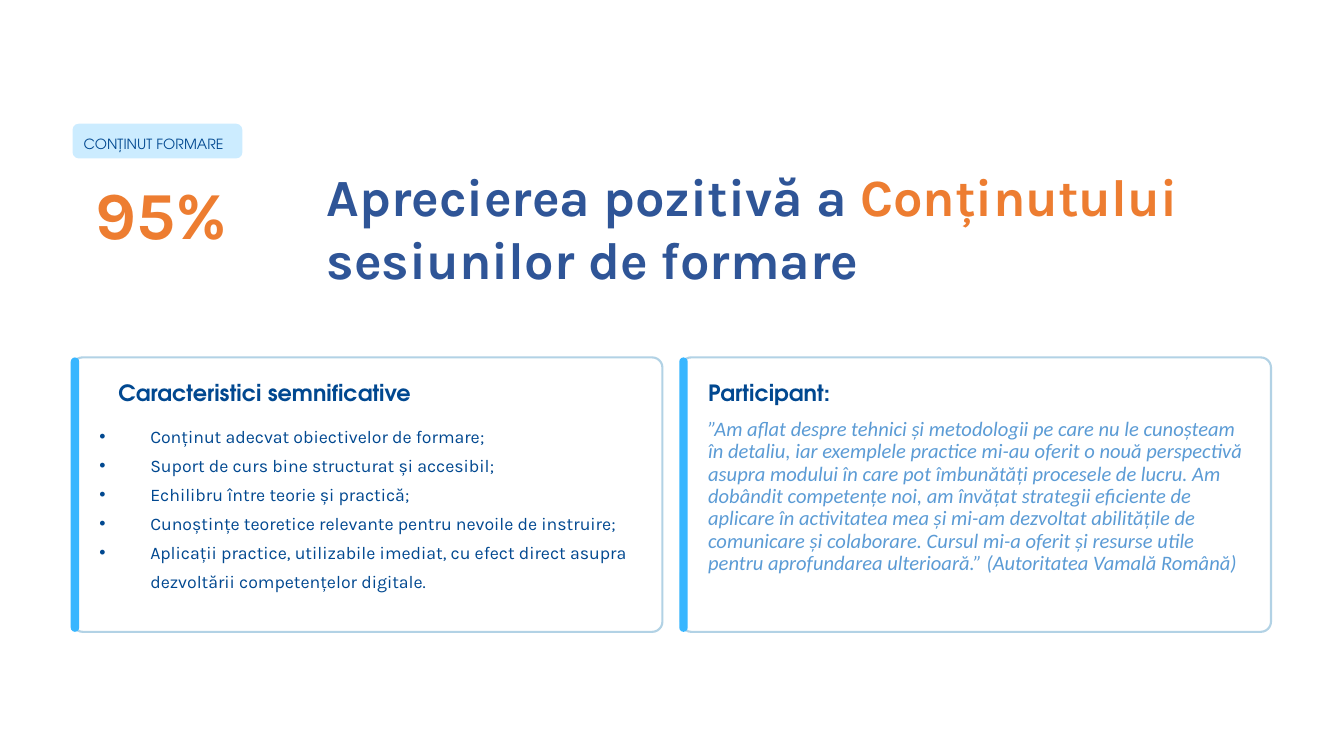
"""Build the slide on how participants rated the content of the training sessions."""
from dataclasses import dataclass

from lxml.etree import SubElement
from pptx import Presentation
from pptx.dml.color import RGBColor
from pptx.enum.shapes import MSO_SHAPE
from pptx.enum.text import MSO_ANCHOR, MSO_AUTO_SIZE, PP_ALIGN
from pptx.oxml.ns import qn
from pptx.shapes.autoshape import Shape
from pptx.slide import Slide
from pptx.util import Pt

NAVY = RGBColor(0x01, 0x48, 0x90)
TITLE_BLUE = RGBColor(0x2F, 0x55, 0x97)
QUOTE_BLUE = RGBColor(0x5B, 0x9B, 0xD5)
ORANGE = RGBColor(0xED, 0x7D, 0x31)
ACCENT = RGBColor(0x38, 0xB6, 0xFF)
BORDER = RGBColor(0xB2, 0xD2, 0xE5)
PALE_BLUE = RGBColor(0xCC, 0xEC, 0xFF)
WHITE = RGBColor(0xFF, 0xFF, 0xFF)

PANEL_TOP, PANEL_WIDTH, PANEL_HEIGHT = 191.5, 316, 147
HEADING_TOP, CONTENT_TOP, CONTENT_WIDTH = 202.3, 224, 291
LIST_INDENT = 27.2

FEATURES = [
    "Conținut adecvat obiectivelor de formare;",
    "Suport de curs bine structurat și accesibil;",
    "Echilibru între teorie și practică;",
    "Cunoștințe teoretice relevante pentru nevoile de instruire;",
    "Aplicații practice, utilizabile imediat, cu efect direct asupra "
    "dezvoltării competențelor digitale.",
]
QUOTE = (
    "”Am aflat despre tehnici și metodologii pe care nu le cunoșteam în detaliu, "
    "iar exemplele practice mi-au oferit o nouă perspectivă asupra modului în care "
    "pot îmbunătăți procesele de lucru. Am dobândit competențe noi, am învățat "
    "strategii eficiente de aplicare în activitatea mea și mi-am dezvoltat "
    "abilitățile de comunicare și colaborare. Cursul mi-a oferit și resurse utile "
    "pentru aprofundarea ulterioară.” (Autoritatea Vamală Română)"
)


@dataclass(frozen=True)
class Frame:
    left: float
    top: float
    width: float
    height: float


@dataclass(frozen=True)
class Style:
    font: str
    size: float
    color: RGBColor
    bold: bool = False
    italic: bool = False
    spacing: float | None = None
    align: PP_ALIGN = PP_ALIGN.LEFT


@dataclass(frozen=True)
class Span:
    text: str
    color: RGBColor | None = None


@dataclass(frozen=True)
class Panel:
    left: float
    heading: str
    heading_left: float


TAG_STYLE = Style("TeX Gyre Adventor", 7.5, NAVY, spacing=12.5)
HEADING_STYLE = Style("TeX Gyre Adventor", 12, NAVY, bold=True, spacing=15)
LIST_STYLE = Style("Karla", 9.5, NAVY, spacing=15.5)
QUOTE_STYLE = Style("Calibri", 11, QUOTE_BLUE, italic=True, spacing=12)
SCORE_STYLE = Style("Karla", 36, ORANGE, bold=True, spacing=26, align=PP_ALIGN.CENTER)
TITLE_STYLE = Style("Karla", 28, TITLE_BLUE, bold=True)

PANELS = [
    Panel(38.9, "Caracteristici semnificative", 63.4),
    Panel(364.9, "Participant:", 379.4),
]


def add_bar(slide: Slide, frame: Frame, rounding: float, fill: RGBColor,
            line: RGBColor | None = None) -> None:
    """Draw a rounded rectangle."""
    bar = slide.shapes.add_shape(MSO_SHAPE.ROUNDED_RECTANGLE, Pt(frame.left),
                                 Pt(frame.top), Pt(frame.width), Pt(frame.height))
    bar.shadow.inherit = False
    bar.adjustments[0] = rounding
    bar.fill.solid()
    bar.fill.fore_color.rgb = fill
    if line is None:
        bar.line.fill.background()
    else:
        bar.line.color.rgb = line
        bar.line.width = Pt(1.13)


def write(box: Shape, paragraphs: list[list[Span]], style: Style,
          inset: tuple[float, float] = (0, 0), bullets: bool = False) -> None:
    """Fill a text shape with styled paragraphs."""
    frame = box.text_frame
    frame.word_wrap = True
    frame.auto_size = MSO_AUTO_SIZE.NONE
    frame.vertical_anchor = MSO_ANCHOR.TOP
    frame.margin_left = frame.margin_right = Pt(inset[0])
    frame.margin_top = frame.margin_bottom = Pt(inset[1])
    for index, spans in enumerate(paragraphs):
        para = frame.add_paragraph() if index else frame.paragraphs[0]
        if bullets:
            properties = para._p.get_or_add_pPr()
            properties.set("marL", str(Pt(LIST_INDENT)))
            properties.set("indent", str(-Pt(LIST_INDENT)))
            SubElement(properties, qn("a:buChar"), char="•")
        para.alignment = style.align
        para.space_before = Pt(0)
        if style.spacing:
            para.line_spacing = Pt(style.spacing)
        for span in spans:
            run = para.add_run()
            run.text = span.text
            run.font.name = style.font
            run.font.size = Pt(style.size)
            run.font.bold = style.bold
            run.font.italic = style.italic
            run.font.color.rgb = span.color or style.color


def add_text(slide: Slide, frame: Frame, text: str, style: Style) -> None:
    """Add a text box with one paragraph."""
    box = slide.shapes.add_textbox(Pt(frame.left), Pt(frame.top),
                                   Pt(frame.width), Pt(frame.height))
    write(box, [[Span(text)]], style)


def place(box: Shape, frame: Frame) -> None:
    """Move a placeholder to its frame and to the front."""
    box.left, box.top = Pt(frame.left), Pt(frame.top)
    box.width, box.height = Pt(frame.width), Pt(frame.height)
    box.element.getparent().append(box.element)


def add_panel(slide: Slide, panel: Panel) -> None:
    """Draw a bordered panel with its accent bar and heading."""
    add_bar(slide, Frame(panel.left, PANEL_TOP, PANEL_WIDTH, PANEL_HEIGHT),
            0.037, WHITE, BORDER)
    add_bar(slide, Frame(panel.left - 1, PANEL_TOP, 4.5, PANEL_HEIGHT), 0.5, ACCENT)
    add_text(slide, Frame(panel.heading_left, HEADING_TOP, 228, 15),
             panel.heading, HEADING_STYLE)


def main() -> None:
    """Assemble and save the deck."""
    deck = Presentation()
    deck.slide_width, deck.slide_height = Pt(720), Pt(405)
    page = deck.slides.add_slide(deck.slide_layouts[1])
    title, body = page.placeholders

    add_bar(page, Frame(38.9, 66.3, 91, 18.6), 0.179, PALE_BLUE)
    add_text(page, Frame(44.8, 69.3, 84, 12.5), "CONȚINUT FORMARE", TAG_STYLE)
    for panel in PANELS:
        add_panel(page, panel)

    place(body, Frame(53.3, CONTENT_TOP, CONTENT_WIDTH, 104))
    write(body, [[Span(feature)] for feature in FEATURES], LIST_STYLE, bullets=True)
    add_text(page, Frame(379.4, CONTENT_TOP, CONTENT_WIDTH, 78.5), QUOTE, QUOTE_STYLE)
    add_text(page, Frame(42.5, 109.5, 88, 26), "95%", SCORE_STYLE)

    place(title, Frame(167.8, 84.3, 539.3, 75))
    write(title, [[Span("Aprecierea pozitivă a "), Span("Conținutului ", ORANGE),
                   Span("sesiunilor de formare")]], TITLE_STYLE, inset=(7.2, 3.6))
    deck.save("out.pptx")


if __name__ == "__main__":
    main()
